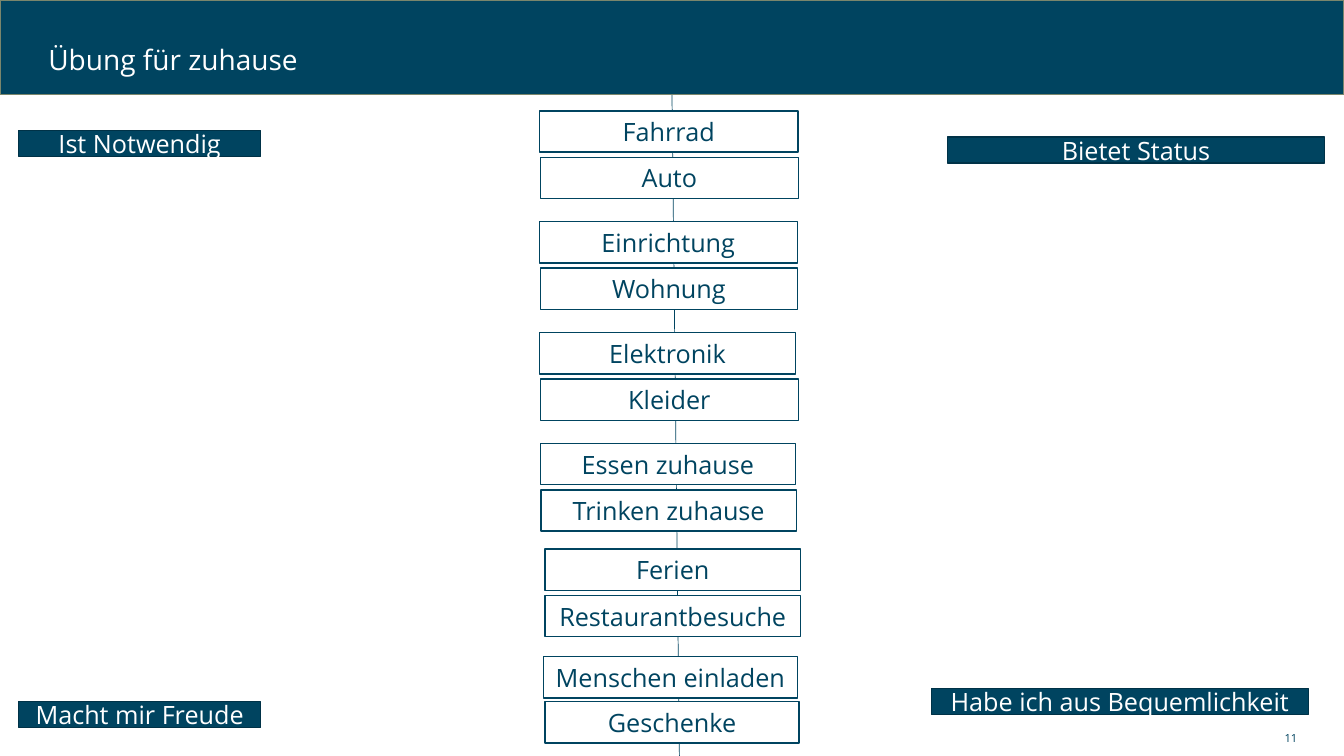
from pptx import Presentation
from pptx.dml.color import RGBColor
from pptx.enum.shapes import MSO_CONNECTOR as CONNECTOR, MSO_SHAPE as SHAPE
from pptx.enum.text import MSO_ANCHOR as ANCHOR, PP_ALIGN as ALIGN
from pptx.oxml.ns import qn
from pptx.util import Pt
from lxml import etree

PETROL, WHITE, EDGE, OLIVE = "004460", "FFFFFF", "003247", "7A866C"


def color(value):
    return RGBColor.from_string(value)


def write(shape, text, size, text_color, align):
    frame = shape.text_frame
    frame.word_wrap = True
    frame.vertical_anchor = ANCHOR.MIDDLE
    paragraph = frame.paragraphs[0]
    paragraph.alignment = align
    run = paragraph.add_run()
    run.text = text
    run.font.name = "Open Sans"
    run.font.size = Pt(size)
    run.font.color.rgb = color(text_color)
    return paragraph


presentation = Presentation()
presentation.slide_width, presentation.slide_height = Pt(960), Pt(540)
slide = presentation.slides.add_slide(presentation.slide_layouts[6])

# Vertical divider from the header to the bottom edge
divider = slide.shapes.add_connector(CONNECTOR.STRAIGHT, Pt(480), Pt(67.7), Pt(485.3), Pt(540))
divider.line.color.rgb = color(PETROL)
divider.line.width = Pt(0.5)
etree.SubElement(divider._element.spPr, qn("a:effectLst"))

# Header band, corner labels and topic cards: text, left, top, width, height, fill, line, text color
boxes = [("", 0, 0, 960, 67.7, PETROL, OLIVE, WHITE)]

corner_labels = [
    ("Ist Notwendig", 13.4, 93.1, 172.8),
    ("Bietet Status", 676.8, 97.9, 269.3),
    ("Macht mir Freude", 13.4, 501.1, 172.8),
    ("Habe ich aus Bequemlichkeit", 665.3, 491.8, 269.3),
]
for text, left, top, width in corner_labels:
    boxes.append((text, left, top, width, 18.7, PETROL, EDGE, WHITE))

# Each pair: top, then text, left and width of its two cards
topic_pairs = [
    (79.2, ("Fahrrad", 385.2, 185), ("Auto", 386, 184.3)),
    (158.4, ("Einrichtung", 385.2, 184.3), ("Wohnung", 386, 183.6)),
    (237.6, ("Elektronik", 385.2, 183.2), ("Kleider", 386, 184.3)),
    (316.8, ("Essen zuhause", 386, 182.2), ("Trinken zuhause", 386.6, 182.2)),
    (392.2, ("Ferien", 389.3, 182.5), ("Restaurantbesuche", 389.3, 182.5)),
    (469.1, ("Menschen einladen", 388.1, 181.6), ("Geschenke", 389.3, 181.6)),
]
for pair_top, *cards in topic_pairs:
    step = 32 if pair_top > 400 else 33.1
    for index, (text, left, width) in enumerate(cards):
        boxes.append((text, left, pair_top + index * step, width, 29.5, WHITE, PETROL, PETROL))

for text, left, top, width, height, fill, line, text_color in boxes:
    box = slide.shapes.add_shape(SHAPE.RECTANGLE, Pt(left), Pt(top), Pt(width), Pt(height))
    box.shadow.inherit = False
    box.fill.solid()
    box.fill.fore_color.rgb = color(fill)
    box.line.color.rgb = color(line)
    box.line.width = Pt(1)
    if text:
        write(box, text, 18, text_color, ALIGN.CENTER)

# Title and page number
title = slide.shapes.add_textbox(Pt(27.4), Pt(24.5), Pt(793.4), Pt(38.9))
write(title, "Übung für zuhause", 20, WHITE, ALIGN.LEFT).line_spacing = 0.9
page_number = slide.shapes.add_textbox(Pt(678.2), Pt(518.4), Pt(255.6), Pt(17.3))
write(page_number, "11", 8, PETROL, ALIGN.RIGHT)

presentation.save("out.pptx")
